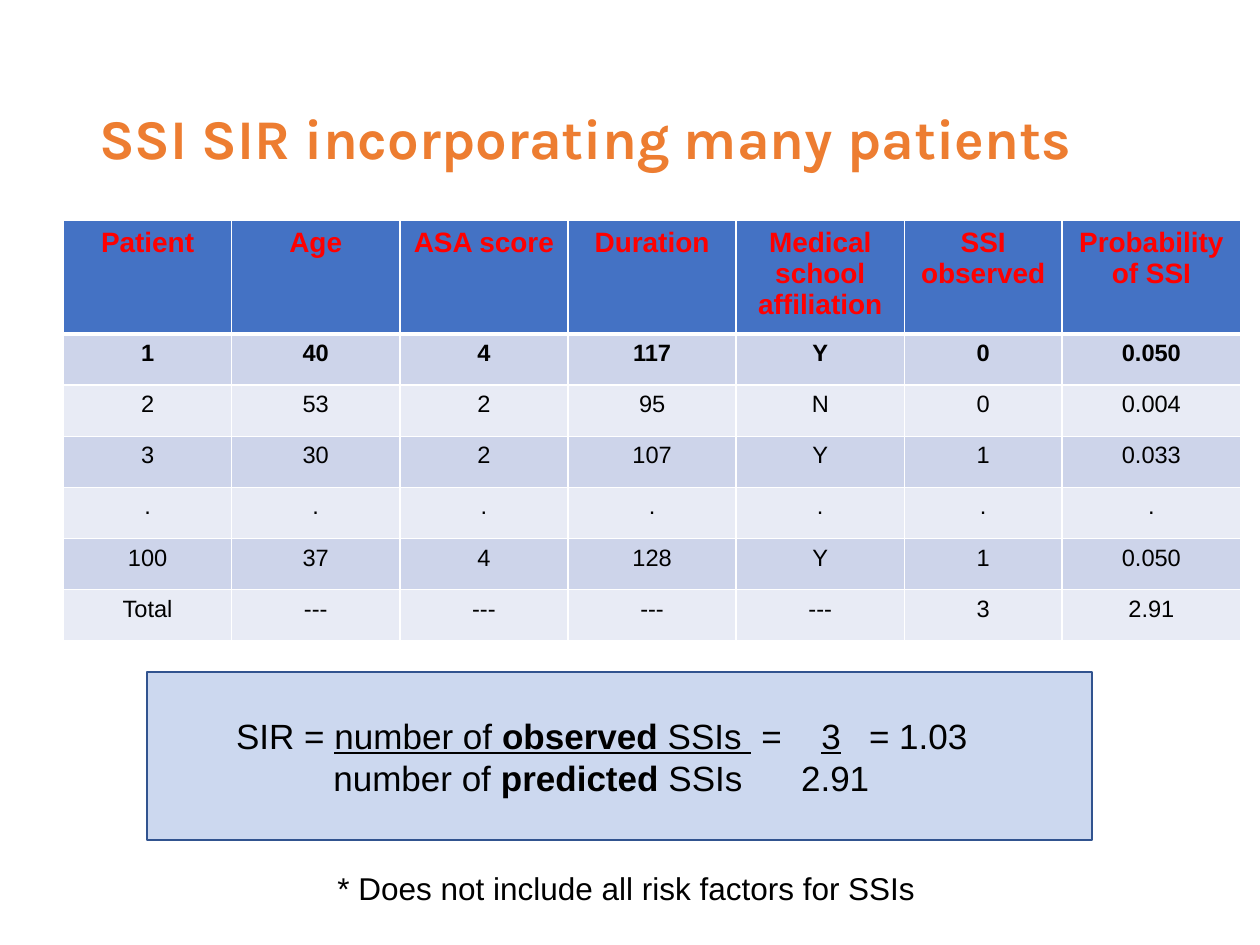
from lxml.etree import SubElement
from pptx import Presentation
from pptx.dml.color import RGBColor
from pptx.enum.shapes import MSO_SHAPE
from pptx.enum.text import MSO_ANCHOR, PP_ALIGN
from pptx.oxml.ns import qn
from pptx.util import Cm, Pt

TITLE = "SSI SIR incorporating many patients"
FOOTNOTE = "* Does not include all risk factors for SSIs"
PATIENT_ROWS = [
    ("Patient", "Age", "ASA score", "Duration", "Medical school affiliation",
     "SSI observed", "Probability of SSI"),
    ("1", "40", "4", "117", "Y", "0", "0.050"),
    ("2", "53", "2", "95", "N", "0", "0.004"),
    ("3", "30", "2", "107", "Y", "1", "0.033"),
    (".",) * 7,
    ("100", "37", "4", "128", "Y", "1", "0.050"),
    ("Total", "---", "---", "---", "---", "3", "2.91"),
]
COLUMN_WIDTHS = [3.39] * 5 + [3.18, 3.6]
HEADER_HEIGHT, ROW_HEIGHT = 2.13, 1.03

# Each line: tab stops in cm, then (text, bold, underlined) spans
FORMULA = [
    ([1.55, 13.35, 14.31, 16.71], [
        ("\tSIR = ", False, False),
        ("number of ", False, True),
        ("observed", True, True),
        (" SSIs ", False, True),
        (" = ", False, False),
        ("\t3\t", False, True),
        ("= 1.03", False, False),
        ("\t", False, True),
    ]),
    ([3.51, 12.94], [
        ("\tnumber of ", False, False),
        ("predicted", True, False),
        (" SSIs\t2.91", False, False),
    ]),
]

BLUE, BAND_DARK, BAND_LIGHT = "4472C4", "CDD4EA", "E8EBF5"


def color(value):
    return RGBColor.from_string(value)


def style(font, size, fill="000000", bold=False, name="Arial"):
    font.name, font.size, font.bold = name, Pt(size), bold
    font.color.rgb = color(fill)


def add_label(page, text, left, top, width, height, align, anchor, **look):
    box = page.shapes.add_textbox(Cm(left), Cm(top), Cm(width), Cm(height))
    frame = box.text_frame
    frame.word_wrap = True
    frame.vertical_anchor = anchor
    frame.text = text
    para = frame.paragraphs[0]
    para.alignment = align
    style(para.runs[0].font, **look)
    return para


def set_borders(cell, widths):
    """Draw white borders; widths maps a side (L, R, T, B) to points."""
    properties = cell._tc.get_or_add_tcPr()
    for side, width in widths.items():
        line = SubElement(properties, qn(f"a:ln{side}"), w=str(Pt(width)))
        fill = SubElement(line, qn("a:solidFill"))
        SubElement(fill, qn("a:srgbClr"), val="FFFFFF")


def add_patient_table(page):
    heights = [HEADER_HEIGHT] + [ROW_HEIGHT] * (len(PATIENT_ROWS) - 1)
    table = page.shapes.add_table(
        len(heights), len(COLUMN_WIDTHS), Cm(1.28), Cm(4.45),
        Cm(sum(COLUMN_WIDTHS)), Cm(sum(heights))).table
    for column, width in zip(table.columns, COLUMN_WIDTHS):
        column.width = Cm(width)
    for r, values in enumerate(PATIENT_ROWS):
        table.rows[r].height = Cm(heights[r])
        header = r == 0
        band = BLUE if header else BAND_DARK if r % 2 else BAND_LIGHT
        for c, value in enumerate(values):
            cell = table.cell(r, c)
            set_borders(cell, {"L": 1, "R": 1, "T": 3 if r == 1 else 1,
                               "B": 3 if header else 1})
            cell.fill.solid()
            cell.fill.fore_color.rgb = color(band)
            cell.text = value
            para = cell.text_frame.paragraphs[0]
            para.alignment = PP_ALIGN.CENTER
            style(para.runs[0].font, 16 if header else 13.5,
                  "FF0000" if header else "000000", bold=r < 2)


def add_formula(page):
    panel = page.shapes.add_shape(
        MSO_SHAPE.RECTANGLE, Cm(2.96), Cm(13.55), Cm(19.05), Cm(3.39))
    panel.shadow.inherit = False
    panel.fill.solid()
    panel.fill.fore_color.rgb = color(BLUE)
    tint = panel._element.spPr.find(qn("a:solidFill")).find(qn("a:srgbClr"))
    SubElement(tint, qn("a:alpha"), val="27000")
    panel.line.color.rgb = color("31538F")
    panel.line.width = Pt(1)
    frame = panel.text_frame
    frame.word_wrap = True
    frame.vertical_anchor = MSO_ANCHOR.MIDDLE
    for i, (stops, spans) in enumerate(FORMULA):
        para = frame.add_paragraph() if i else frame.paragraphs[0]
        para.alignment = PP_ALIGN.LEFT
        tabs = SubElement(para._p.get_or_add_pPr(), qn("a:tabLst"))
        for stop in stops:
            SubElement(tabs, qn("a:tab"), pos=str(Cm(stop)), algn="l")
        for text, bold, underlined in spans:
            span = para.add_run()
            span.text = text
            style(span.font, 20, bold=bold)
            span.font.underline = underlined


def main():
    deck = Presentation()
    deck.slide_width, deck.slide_height = Cm(25.4), Cm(19.05)
    page = deck.slides.add_slide(deck.slide_layouts[6])
    title = add_label(page, TITLE, 1.75, 1.01, 21.9, 3.68, PP_ALIGN.LEFT,
                      MSO_ANCHOR.MIDDLE, size=32, fill="ED7D31", bold=True,
                      name="Karla")
    title.line_spacing = 0.9
    add_patient_table(page)
    add_formula(page)
    add_label(page, FOOTNOTE, 3, 17.4, 19.25, 1.02, PP_ALIGN.CENTER,
              MSO_ANCHOR.TOP, size=18)
    deck.save("out.pptx")


if __name__ == "__main__":
    main()
